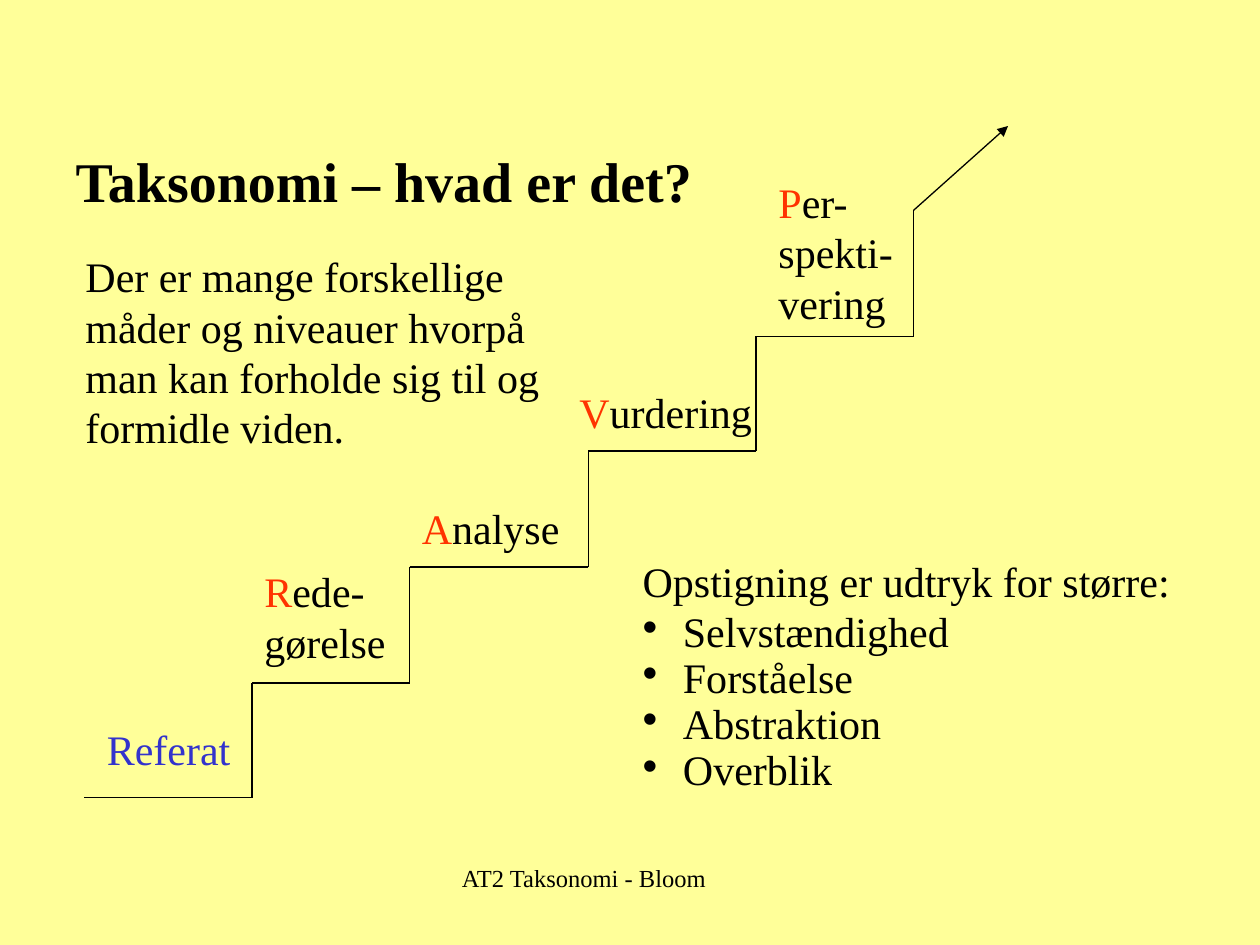
from itertools import pairwise

from lxml import etree
from pptx import Presentation
from pptx import util as u
from pptx.dml import color
from pptx.enum import shapes, text
from pptx.oxml import ns

BLACK, RED, BLUE = "000000", "FF3300", "3333CC"


def paint(code):
    return color.RGBColor.from_string(code)


def write(para, words, size=24, ink=BLACK, bold=False):
    run = para.add_run()
    run.text = words
    font = run.font
    font.name, font.size, font.bold = "Times New Roman", u.Pt(size), bold
    font.color.rgb = paint(ink)


def add_tag(parent, name, **attrs):
    return etree.SubElement(parent, ns.qn(name), attrs)


class Deck:
    line_ink = BLACK
    line_width = u.Pt(0.75)

    def __init__(self, back):
        self.file = Presentation()
        self.file.slide_width, self.file.slide_height = u.Inches(10), u.Inches(7.5)
        self.slide = self.file.slides.add_slide(self.file.slide_layouts[1])
        fill = self.slide.background.fill
        fill.solid()
        fill.fore_color.rgb = paint(back)

    def setup(self, shape, place, wrap):
        shape.left, shape.top, shape.width, shape.height = map(u.Inches, place)
        frame = shape.text_frame
        frame.word_wrap = wrap
        frame.auto_size = text.MSO_AUTO_SIZE.NONE
        frame.vertical_anchor = text.MSO_ANCHOR.TOP
        return frame

    def title(self, place, words):
        para = self.setup(self.slide.shapes.title, place, False).paragraphs[0]
        para.alignment = text.PP_ALIGN.LEFT
        write(para, words, size=32, bold=True)

    def list(self, place, head, items):
        frame = self.setup(self.slide.placeholders[1], place, True)
        for spot, words in enumerate([head, *items]):
            para = frame.add_paragraph() if spot else frame.paragraphs[0]
            para.space_before = u.Pt(12 if spot else 0)
            para.line_spacing = 0.5 if spot else 1.0
            indent = u.Inches(0.32 if spot else 0)
            props = para._p.get_or_add_pPr()
            props.set("marL", str(indent))
            props.set("indent", str(-indent))
            if spot:
                add_tag(props, "a:buChar", char="•")
            else:
                add_tag(props, "a:buNone")
            write(para, words)

    def label(self, place, lines, first=None, wrap=False, center=False, **style):
        box = self.slide.shapes.add_textbox(0, 0, 0, 0)
        frame = self.setup(box, place, wrap)
        for spot, words in enumerate(lines):
            para = frame.add_paragraph() if spot else frame.paragraphs[0]
            if center:
                para.alignment = text.PP_ALIGN.CENTER
            if first and not spot:
                write(para, words[0], ink=first)
                words = words[1:]
            write(para, words, **style)

    def line(self, start, end, arrow=False):
        ends = map(u.Inches, (*start, *end))
        link = self.slide.shapes.add_connector(shapes.MSO_CONNECTOR.STRAIGHT, *ends)
        link.line.color.rgb = paint(self.line_ink)
        link.line.width = self.line_width
        if arrow:
            add_tag(link.line._ln, "a:tailEnd", type="triangle")
        add_tag(link._element.spPr, "a:effectLst")


def main():
    deck = Deck("FFFF99")
    deck.title((0.5, 1.11, 5.14, 1.17), "Taksonomi – hvad er det?")
    deck.list((5, 4.36, 4.83, 3.3), "Opstigning er udtryk for større:",
              ["Selvstændighed", "Forståelse", "Abstraktion", "Overblik"])
    deck.label((0.58, 1.94, 3.83, 1.72),
               ["Der er mange forskellige måder og niveauer hvorpå "
                "man kan forholde sig til og formidle viden."], wrap=True)

    stairs = [(0.67, 6.33), (2, 5.42), (3.25, 4.5), (4.67, 3.58), (6, 2.67), (7.25, 1.67)]
    for (left, low), (right, high) in pairwise(stairs):
        deck.line((left, low), (right, low))
        deck.line((right, low), (right, high))
    deck.line(stairs[-1], (8, 1), arrow=True)

    deck.label((0.75, 5.69, 1.18, 0.5), ["Referat"], ink=BLUE)
    steps = [
        ((2, 4.44, 1.16, 0.9), ["Rede-", "gørelse"]),
        ((3.25, 3.94, 1.33, 0.5), ["Analyse"]),
        ((4.5, 3.02, 1.57, 0.5), ["Vurdering"]),
        ((6.08, 1.35, 1.11, 1.3), ["Per-", "spekti-", "vering"]),
    ]
    for place, lines in steps:
        deck.label(place, lines, first=RED)

    deck.label((3.05, 6.8, 3.17, 0.5), ["AT2 Taksonomi - Bloom"],
               wrap=True, center=True, size=14)
    deck.file.save("out.pptx")


if __name__ == "__main__":
    main()
